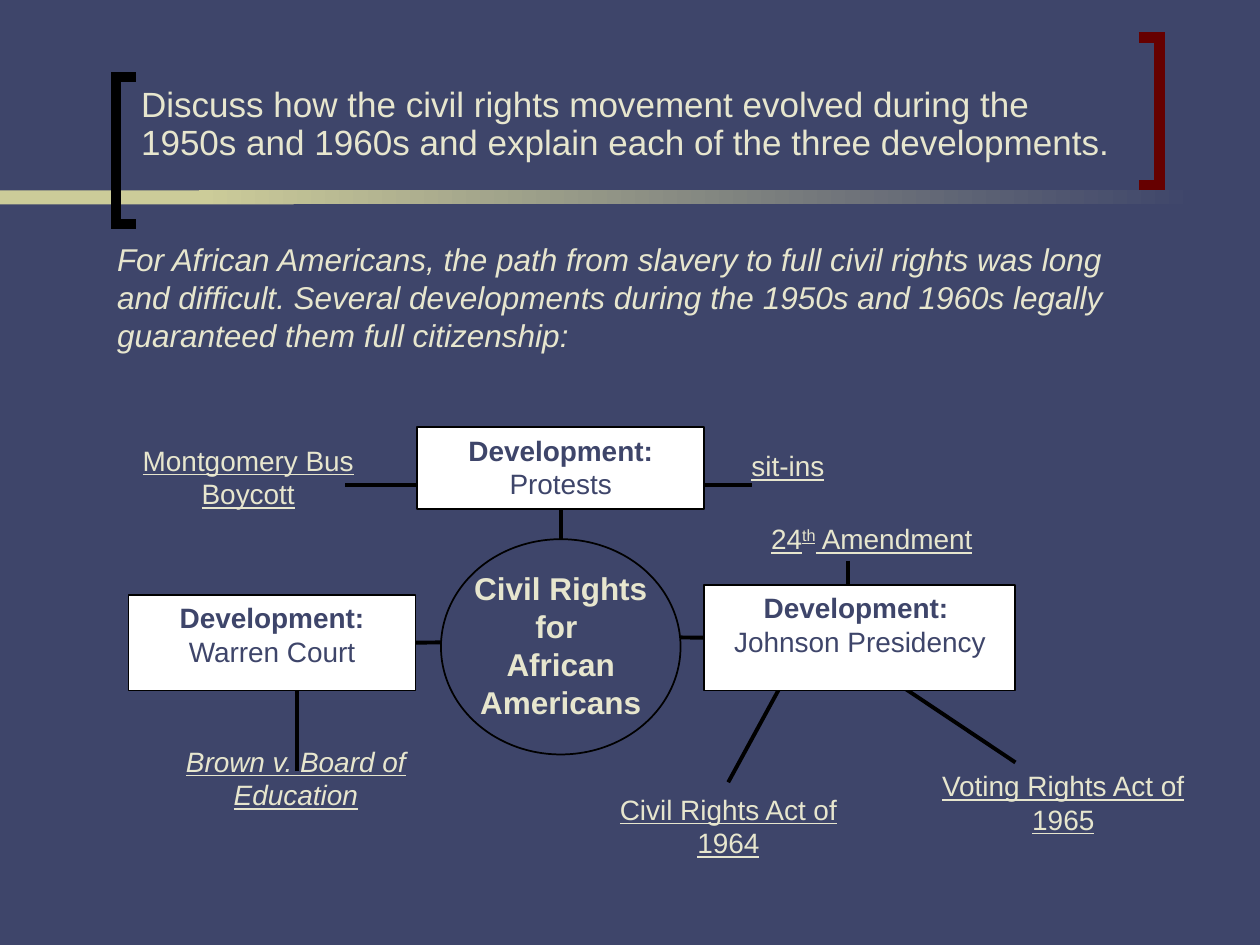
from lxml.etree import SubElement
from pptx import Presentation
from pptx.dml.color import RGBColor
from pptx.enum.shapes import MSO_CONNECTOR, MSO_SHAPE
from pptx.enum.text import MSO_ANCHOR, MSO_AUTO_SIZE, PP_ALIGN
from pptx.oxml.ns import qn
from pptx.util import Cm, Pt

NAVY = RGBColor(0x3E, 0x45, 0x6A)
CREAM = RGBColor(0xE7, 0xE6, 0xCE)
KHAKI = RGBColor(0xCC, 0xCC, 0x99)
MAROON = RGBColor(0x66, 0x00, 0x00)
BLACK = RGBColor(0, 0, 0)
WHITE = RGBColor(255, 255, 255)

BOTTOM, LEFT, RIGHT, TOP = 2, 1, 3, 0


class ConceptMap:
    """Holds the style and the current page."""

    font_name = "Arial"

    def __init__(self, page):
        self.page = page
        self.shapes = page.shapes
        page.background.fill.solid()
        page.background.fill.fore_color.rgb = NAVY

    def fill_text(self, frame, paragraphs, size, color, align=PP_ALIGN.CENTER,
                  anchor=MSO_ANCHOR.TOP):
        """Each paragraph is a list of (text, font values) spans."""
        layout = {"word_wrap": True, "auto_size": MSO_AUTO_SIZE.NONE, "vertical_anchor": anchor}
        for name, value in layout.items():
            setattr(frame, name, value)
        for index, spans in enumerate(paragraphs):
            para = frame.paragraphs[0] if index == 0 else frame.add_paragraph()
            para.alignment = align
            for text, extra in spans:
                span = para.add_run()
                span.text = text
                values = {"name": self.font_name, "size": Pt(size), **extra}
                for name, value in values.items():
                    setattr(span.font, name, value)
                span.font.color.rgb = color

    def outline(self, shape, color, width):
        shape.line.color.rgb = color
        shape.line.width = Pt(width)

    def title(self, text, place):
        box = self.page.shapes.title
        for name, value in zip(("left", "top", "width", "height"), place):
            setattr(box, name, Cm(value))
        self.fill_text(box.text_frame, [[(text, {})]], 20, CREAM, PP_ALIGN.LEFT,
                       MSO_ANCHOR.BOTTOM)
        box.text_frame.paragraphs[0].line_spacing = 0.9

    def text(self, paragraphs, place, size=16, align=PP_ALIGN.CENTER):
        box = self.shapes.add_textbox(*map(Cm, place))
        self.fill_text(box.text_frame, paragraphs, size, CREAM, align)
        return box

    def shape(self, kind, place):
        shape = self.shapes.add_shape(kind, *map(Cm, place))
        shape.shadow.inherit = False
        return shape

    def bar(self, place, fade=False):
        shape = self.shape(MSO_SHAPE.RECTANGLE, place)
        shape.line.fill.background()
        if fade:
            shape.fill.gradient()
            shape.fill.gradient_angle = 0
            for stop, color in zip(shape.fill.gradient_stops, (KHAKI, NAVY)):
                stop.color.rgb = color
        else:
            shape.fill.solid()
            shape.fill.fore_color.rgb = KHAKI

    def bracket(self, tip, spine, top, color, height=2.97):
        points = [(tip, top), (spine, top), (spine, top + height), (tip, top + height)]
        corners = [(Cm(x), Cm(y)) for x, y in points]
        builder = self.shapes.build_freeform(*corners[0])
        builder.add_line_segments(corners[1:], close=False)
        shape = builder.convert_to_shape()
        shape.shadow.inherit = False
        shape.fill.background()
        self.outline(shape, color, 6)
        SubElement(shape._element.spPr.find(qn("a:ln")), qn("a:miter"), lim="800000")

    def ellipse(self, place):
        shape = self.shape(MSO_SHAPE.OVAL, place)
        shape.fill.background()
        self.outline(shape, BLACK, 1)
        return shape

    def development(self, heading, name, place):
        shape = self.shape(MSO_SHAPE.RECTANGLE, place)
        shape.fill.solid()
        shape.fill.fore_color.rgb = WHITE
        self.outline(shape, BLACK, 1)
        self.fill_text(shape.text_frame, [[(heading, {"bold": True})], [(name, {})]], 16, NAVY)
        return shape

    def line(self, start, end):
        link = self.shapes.add_connector(MSO_CONNECTOR.STRAIGHT, *map(Cm, start + end))
        self.outline(link, BLACK, 2.25)
        SubElement(link._element.spPr, qn("a:effectLst"))
        return link


def main():
    deck = Presentation()
    deck.slide_width, deck.slide_height = Cm(25.4), Cm(19.05)
    chart = ConceptMap(deck.slides.add_slide(deck.slide_layouts[5]))

    # Header decoration and title
    chart.bar((0, 3.84, 5.92, 0.28))
    chart.bar((4.01, 3.84, 20.12, 0.28), fade=True)
    chart.bracket(2.74, 2.34, 1.55, BLACK)
    chart.bracket(22.96, 23.37, 0.76, MAROON)
    chart.title("Discuss how the civil rights movement evolved during the 1950s and 1960s "
                "and explain each of the three developments.", (2.59, 0.28, 20.47, 3.13))

    # Introduction
    intro = ("For African Americans, the path from slavery to full civil rights was long and "
             "difficult. Several developments during the 1950s and 1960s legally guaranteed "
             "them full citizenship:")
    chart.text([[(intro, {"italic": True})]], (2.11, 4.72, 21.16, 3.3), 18, PP_ALIGN.LEFT)

    # Central topic
    topic = ("Civil Rights", "for ", "African Americans")
    chart.text([[(text, {"bold": True})] for text in topic], (8.89, 11.35, 4.83, 3.38), 18)
    circle = chart.ellipse((8.89, 10.87, 4.83, 4.34))

    # Lines from the developments to their examples
    for start, end in (
        ((5.99, 13.11), (5.99, 15.54)),
        ((16.13, 13.11), (14.68, 15.77)),
        ((17.09, 11.3), (17.09, 12.27)),
        ((17.09, 13.11), (20.47, 15.37)),
        ((14.2, 9.78), (15.16, 9.78)),
        ((8.41, 9.78), (6.96, 9.78)),
    ):
        chart.line(start, end)

    # Developments
    protests = chart.development("Development:", "Protests", (8.41, 8.61, 5.79, 1.65))
    court = chart.development("Development:", "Warren Court", (2.59, 11.99, 5.79, 1.93))
    johnson = chart.development("Development: ", "Johnson Presidency", (14.2, 11.79, 6.27, 2.13))

    # Links from the developments to the topic
    link = chart.line((11.3, 10.26), (11.3, 10.87))
    link.begin_connect(protests, BOTTOM)
    link.end_connect(circle, TOP)
    chart.line((8.38, 12.95), (8.89, 12.95)).begin_connect(court, RIGHT)
    chart.line((14.2, 12.85), (13.72, 12.85)).begin_connect(johnson, LEFT)

    # Examples
    underlined = {"underline": True}
    for text, place, extra in (
        ("Montgomery Bus Boycott", (2.11, 8.81, 5.79, 1.93), {}),
        ("sit-ins", (14.68, 8.92, 2.41, 1.93), {}),
        ("Brown v. Board of Education", (3.07, 14.88, 5.79, 1.93), {"italic": True}),
        ("Civil Rights Act of 1964", (11.79, 15.85, 5.79, 1.93), {}),
        ("Voting Rights Act of 1965", (18.54, 15.37, 5.79, 1.93), {}),
    ):
        chart.text([[(text, {**underlined, **extra})]], place)
    amendment = chart.text([[(text, underlined) for text in ("24", "th", " Amendment")]],
                           (14.68, 10.39, 5.79, 1.45))
    ordinal = amendment.text_frame.paragraphs[0].runs[1]
    ordinal._r.get_or_add_rPr().set("baseline", "30000")

    deck.save("out.pptx")


if __name__ == "__main__":
    main()
